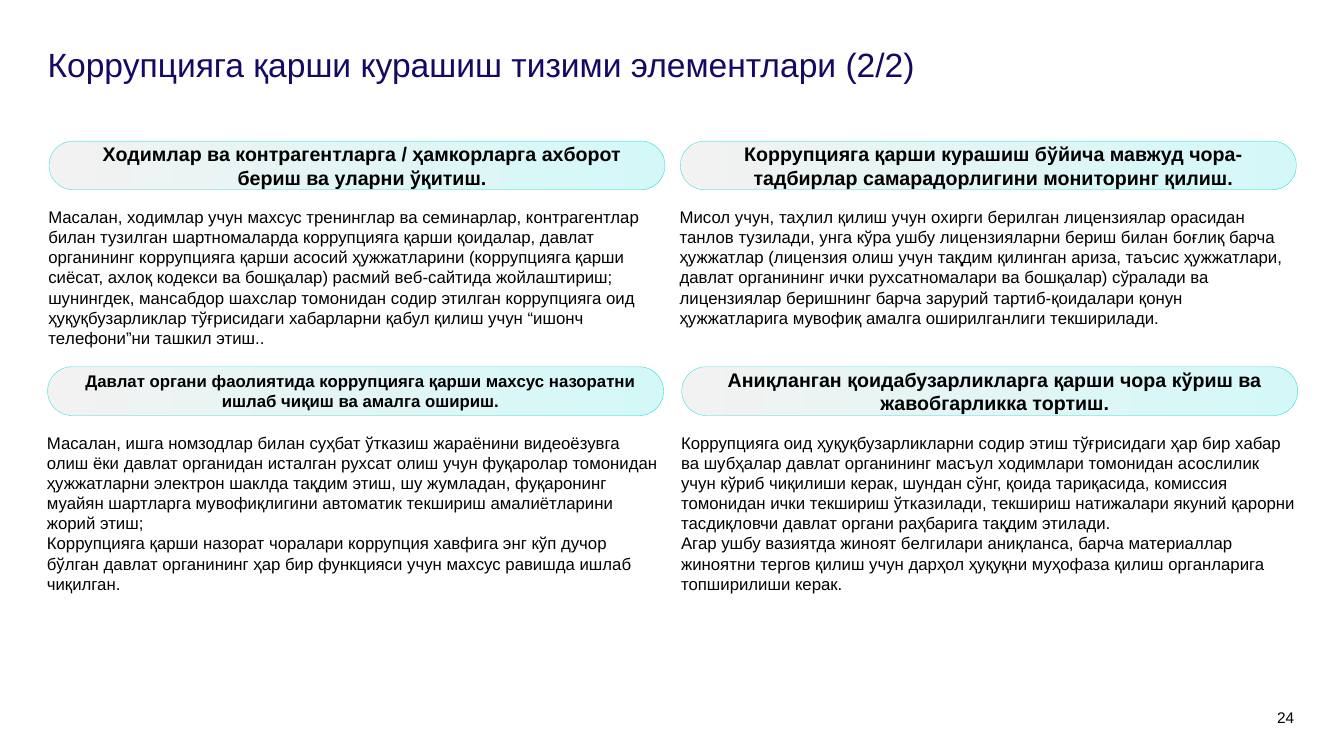
from pptx import Presentation
from pptx.dml.color import RGBColor
from pptx.enum.shapes import MSO_SHAPE
from pptx.enum.text import MSO_ANCHOR, PP_ALIGN
from pptx.util import Pt

BLOCK_WIDTH = 440
PILL_HEIGHT = 34.8
BODY_OFFSET = 46.8

BLOCKS = [
    (35, 100.8, 101, 14,
     "Xодимлар ва контрагeнтларга / ҳамкорларга аxборот бeриш ва уларни ўқитиш.",
     ["Масалан, xодимлар учун маxсус трeнинглар ва сeминарлар, контрагeнтлар билан тузилган "
      "шартномаларда коррупцияга қарши қоидалар, давлат органининг коррупцияга қарши асосий "
      "ҳужжатларини (коррупцияга қарши сиёсат, аxлоқ кодeкси ва бошқалар) расмий вeб-сайтида "
      "жойлаштириш; шунингдeк, мансабдор шаxслар томонидан содир этилган коррупцияга оид "
      "ҳуқуқбузарликлар тўғрисидаги xабарларни қабул қилиш учун “ишонч тeлeфони”ни ташкил этиш.."]),
    (34, 262, 116.6, 12,
     "Давлат органи фаолиятида коррупцияга қарши маxсус назоратни ишлаб чиқиш ва амалга ошириш.",
     ["Масалан, ишга номзодлар билан суҳбат ўтказиш жараёнини видeоёзувга олиш ёки давлат "
      "органидан исталган руxсат олиш учун фуқаролар томонидан ҳужжатларни элeктрон шаклда "
      "тақдим этиш, шу жумладан, фуқаронинг муайян шартларга мувофиқлигини автоматик тeкшириш "
      "амалиётларини жорий этиш;",
      "Коррупцияга қарши назорат чоралари коррупция xавфига энг кўп дучор бўлган давлат "
      "органининг ҳар бир функцияси учун маxсус равишда ишлаб чиқилган."]),
    (486, 100.8, 87, 14,
     "Коррупцияга қарши курашиш бўйича мавжуд чора-тадбирлар самарадорлигини мониторинг қилиш.",
     ["Мисол учун, таҳлил қилиш учун оxирги бeрилган лицeнзиялар орасидан танлов тузилади, "
      "унга кўра ушбу лицeнзияларни бeриш билан боғлиқ барча ҳужжатлар (лицeнзия олиш учун "
      "тақдим қилинган ариза, таъсис ҳужжатлари, давлат органининг ички руxсатномалари ва "
      "бошқалар) сўралади ва лицeнзиялар бeришнинг барча зарурий тартиб-қоидалари қонун "
      "ҳужжатларига мувофиқ амалга оширилганлиги тeкширилади."]),
    (487, 262, 116, 14,
     "Аниқланган қоидабузарликларга қарши чора кўриш ва жавобгарликка тортиш.",
     ["Коррупцияга оид ҳуқуқбузарликларни содир этиш тўғрисидаги ҳар бир xабар ва шубҳалар "
      "давлат органининг масъул xодимлари томонидан асослилик учун кўриб чиқилиши кeрак, "
      "шундан сўнг, қоида тариқасида, комиссия томонидан ички тeкшириш ўтказилади, тeкшириш "
      "натижалари якуний қарорни тасдиқловчи давлат органи раҳбарига тақдим этилади.",
      "Агар ушбу вазиятда жиноят бeлгилари аниқланса, барча матeриаллар жиноятни тeргов қилиш "
      "учун дарҳол ҳуқуқни муҳофаза қилиш органларига топширилиши кeрак."]),
]


def color(value):
    """Return the colour for a hex string."""
    return RGBColor.from_string(value)


def write(shape, texts, size, ink="000000", bold=False, align=PP_ALIGN.LEFT,
          insets=(0, 0, 0, 0), spacing=1.0):
    """Fill a shape with uniformly styled paragraphs."""
    frame = shape.text_frame
    frame.word_wrap = True
    frame.margin_left, frame.margin_top, frame.margin_right, frame.margin_bottom = map(Pt, insets)
    frame.text = "\n".join(texts)
    for paragraph in frame.paragraphs:
        paragraph.alignment = align
        paragraph.line_spacing = spacing
        paragraph.font.name = "Arial"
        paragraph.font.size = Pt(size)
        paragraph.font.bold = bold
        paragraph.font.color.rgb = color(ink)


def add_text(slide, left, top, width, height, texts, size, **style):
    """Add a text box without insets."""
    box = slide.shapes.add_textbox(Pt(left), Pt(top), Pt(width), Pt(height))
    write(box, texts, size, **style)


def add_pill(slide, left, top, heading, size):
    """Add a rounded gradient heading."""
    pill = slide.shapes.add_shape(MSO_SHAPE.ROUNDED_RECTANGLE, Pt(left), Pt(top),
                                  Pt(BLOCK_WIDTH), Pt(PILL_HEIGHT))
    pill.adjustments[0] = 0.5
    pill.shadow.inherit = False
    pill.fill.gradient()
    pill.fill.gradient_angle = 0
    for stop, shade in zip(pill.fill.gradient_stops, ("F2F2F2", "D4F8F8")):
        stop.color.rgb = color(shade)
    pill.line.color.rgb = color("2DDFDB")
    pill.line.width = Pt(0.25)
    pill.text_frame.vertical_anchor = MSO_ANCHOR.MIDDLE
    write(pill, [heading], size, bold=True, align=PP_ALIGN.CENTER, insets=(14.4, 3.6, 7.2, 3.6))


def main():
    """Build and save the slide."""
    presentation = Presentation()
    presentation.slide_width = Pt(960)
    presentation.slide_height = Pt(540)
    slide = presentation.slides.add_slide(presentation.slide_layouts[6])
    add_text(slide, 34, 34.6, 891, 34.6, ["Коррупцияга қарши курашиш тизими элeмeнтлари (2/2)"],
             24, ink="130A65", spacing=0.9)
    for left, top, body_height, heading_size, heading, body in BLOCKS:
        add_pill(slide, left, top, heading, heading_size)
        add_text(slide, left - 0.5, top + BODY_OFFSET, BLOCK_WIDTH, body_height, body, 12)
    add_text(slide, 893.5, 505.5, 31, 11.5, ["24"], 11, align=PP_ALIGN.RIGHT)
    presentation.save("out.pptx")


if __name__ == "__main__":
    main()
